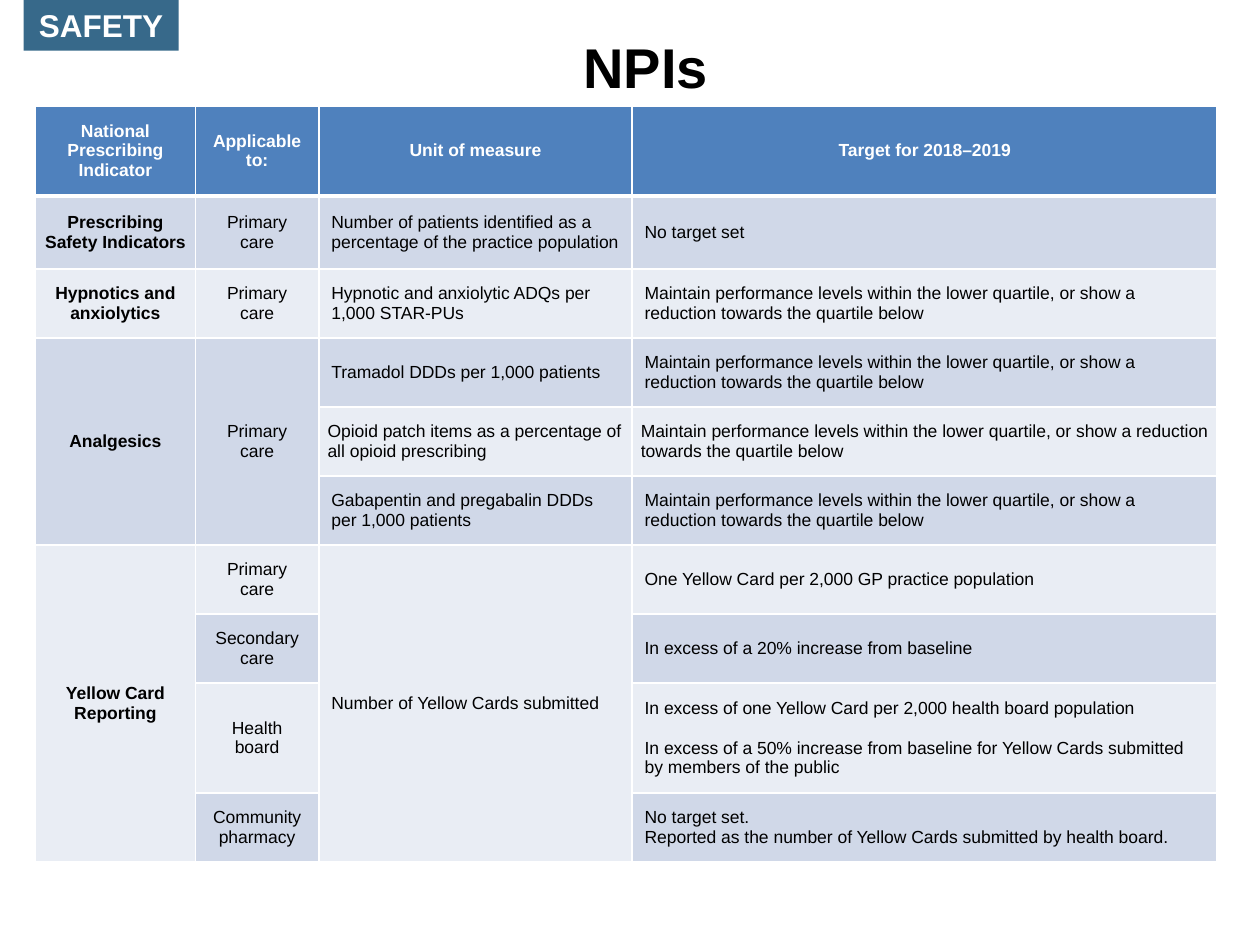
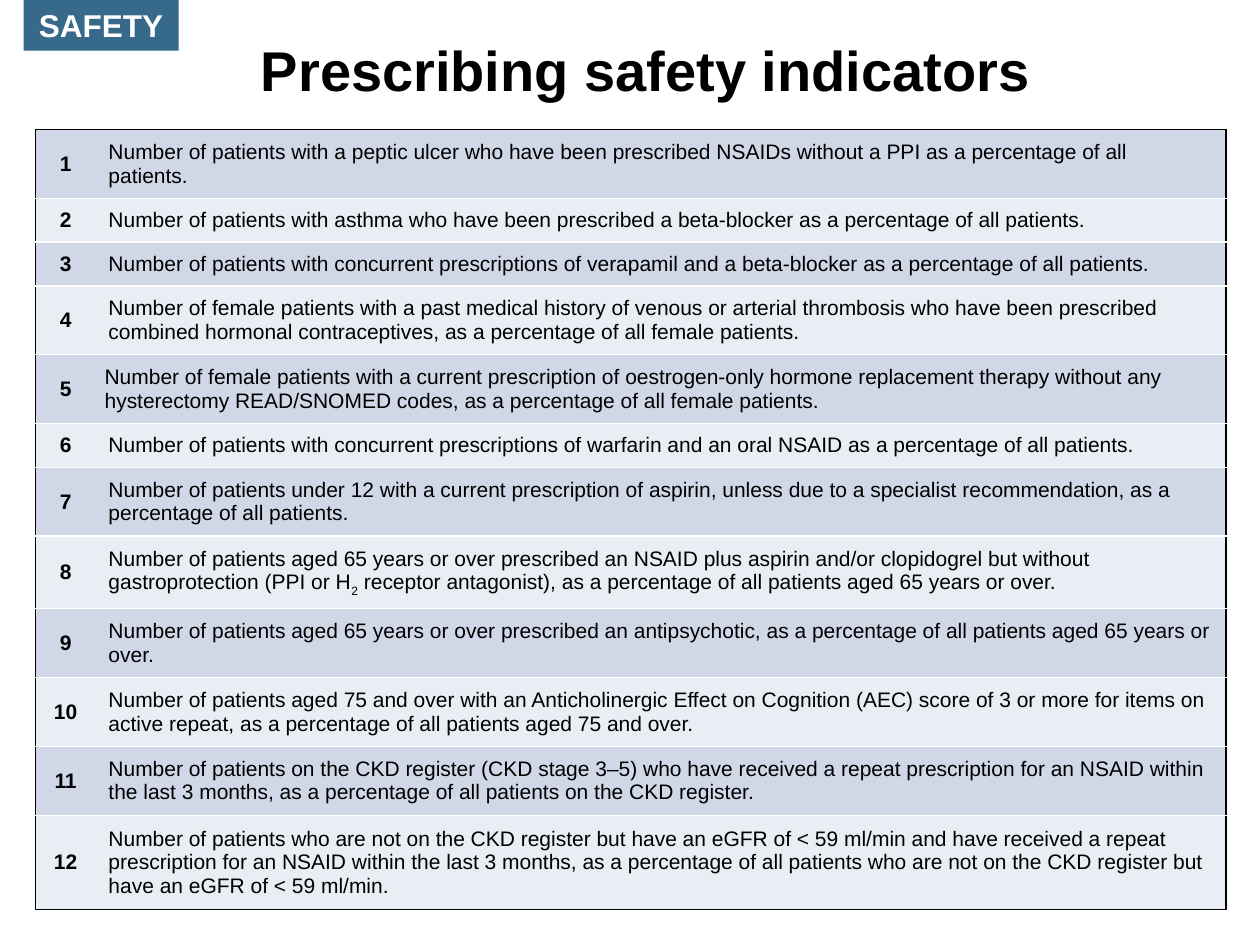
from dataclasses import dataclass
from typing import Any, Optional

from lxml import etree
from pptx import Presentation
from pptx.dml.color import RGBColor
from pptx.enum import shapes, text
from pptx.oxml.ns import qn
from pptx.slide import Slide
from pptx.util import Pt

Border = Optional[tuple[str, float]]


@dataclass(frozen=True)
class Theme:
    font: str = "Arial"
    ink: str = "000000"
    white: str = "FFFFFF"
    badge: str = "37698A"
    header: str = "4F81BD"
    bands: tuple[str, str] = ("D0D8E8", "E9EDF4")
    title_size: float = 32
    badge_size: float = 18
    npi_size: float = 10
    indicator_size: float = 12


@dataclass(frozen=True)
class TableSpec:
    left: float
    top: float
    widths: tuple[float, ...]
    heights: tuple[float, ...]
    rows: tuple[tuple[Optional[str], ...], ...]
    size: float
    pad: float
    centred: int
    has_header: bool
    framed: bool
    tight: frozenset[tuple[int, int]]


THEME = Theme()
SIDE_PAD, TIGHT_PAD = 7.2, 5
PRIMARY = "Primary care"
MAINTAIN = ("Maintain performance levels within the lower quartile, "
            "or show a reduction towards the quartile below")

NPIS = TableSpec(
    left=20.2, top=60.5, widths=(91.4, 70.6, 179, 334.4),
    heights=(50, 41.7, *[39.4] * 6, 61.7, 39.4),
    size=THEME.npi_size, pad=7.7, centred=2, has_header=True, framed=False,
    tight=frozenset({(1, 0), (2, 0), (4, 2), (4, 3)}),
    rows=(
        ("National Prescribing Indicator", "Applicable to:", "Unit of measure",
         "Target for 2018–2019"),
        ("Prescribing Safety Indicators", PRIMARY,
         "Number of patients identified as a percentage of the practice population",
         "No target set"),
        ("Hypnotics and anxiolytics", PRIMARY,
         "Hypnotic and anxiolytic ADQs per 1,000 STAR-PUs", MAINTAIN),
        ("Analgesics", PRIMARY, "Tramadol DDDs per 1,000 patients", MAINTAIN),
        (None, None, "Opioid patch items as a percentage of all opioid prescribing", MAINTAIN),
        (None, None, "Gabapentin and pregabalin DDDs per 1,000 patients", MAINTAIN),
        ("Yellow Card Reporting", PRIMARY, "Number of Yellow Cards submitted",
         "One Yellow Card per 2,000 GP practice population"),
        (None, "Secondary care", None, "In excess of a 20% increase from baseline"),
        (None, "Health board", None,
         "In excess of one Yellow Card per 2,000 health board population\n"
         "In excess of a 50% increase from baseline for Yellow Cards submitted "
         "by members of the public"),
        (None, "Community pharmacy", None,
         "No target set.\n"
         "Reported as the number of Yellow Cards submitted by health board."),
    ),
)
SPACED_CELL = (8, 3)

INDICATORS = (
    "Number of patients with a peptic ulcer who have been prescribed NSAIDs without a PPI "
    "as a percentage of all patients.",
    "Number of patients with asthma who have been prescribed a beta-blocker "
    "as a percentage of all patients.",
    "Number of patients with concurrent prescriptions of verapamil and a beta-blocker "
    "as a percentage of all patients.",
    "Number of female patients with a past medical history of venous or arterial thrombosis "
    "who have been prescribed combined hormonal contraceptives, "
    "as a percentage of all female patients.",
    "Number of female patients with a current prescription of oestrogen-only hormone "
    "replacement therapy without any hysterectomy READ/SNOMED codes, "
    "as a percentage of all female patients.",
    "Number of patients with concurrent prescriptions of warfarin and an oral NSAID "
    "as a percentage of all patients.",
    "Number of patients under 12 with a current prescription of aspirin, "
    "unless due to a specialist recommendation, as a percentage of all patients.",
    "Number of patients aged 65 years or over prescribed an NSAID plus aspirin and/or "
    "clopidogrel but without gastroprotection (PPI or H|2| receptor antagonist), "
    "as a percentage of all patients aged 65 years or over.",
    "Number of patients aged 65 years or over prescribed an antipsychotic, "
    "as a percentage of all patients aged 65 years or over.",
    "Number of patients aged 75 and over with an Anticholinergic Effect on Cognition (AEC) "
    "score of 3 or more for items on active repeat, "
    "as a percentage of all patients aged 75 and over.",
    "Number of patients on the CKD register (CKD stage 3–5) who have received a repeat "
    "prescription for an NSAID within the last 3 months, "
    "as a percentage of all patients on the CKD register.",
    "Number of patients who are not on the CKD register but have an eGFR of < 59 ml/min "
    "and have received a repeat prescription for an NSAID within the last 3 months, "
    "as a percentage of all patients who are not on the CKD register "
    "but have an eGFR of < 59 ml/min.",
)
ONE_LINE, TWO_LINES, THREE_LINES = (13.8 * n + 10.8 for n in (1, 2, 3))
SUBSCRIPT_LINES = TWO_LINES + 1.6

SAFETY = TableSpec(
    left=20.2, top=74, widths=(34.6, 645.8),
    heights=(TWO_LINES, ONE_LINE, ONE_LINE, TWO_LINES, TWO_LINES, ONE_LINE, TWO_LINES,
             SUBSCRIPT_LINES, TWO_LINES, TWO_LINES, TWO_LINES, THREE_LINES),
    size=THEME.indicator_size, pad=5.3, centred=1, has_header=False, framed=True,
    tight=frozenset({(4, 0), (4, 1)}),
    rows=tuple((str(n), wording) for n, wording in enumerate(INDICATORS, 1)),
)


def write(tf: Any, wording: str, *, size: float, color: str = THEME.ink, bold: bool = False,
          centre: bool = False, gap: float = 0) -> None:
    for i, line in enumerate(wording.split("\n")):
        p = tf.add_paragraph() if i else tf.paragraphs[0]
        p.alignment = text.PP_ALIGN.CENTER if centre else text.PP_ALIGN.LEFT
        if i and gap:
            p.space_before = Pt(gap)
        for j, part in enumerate(line.split("|")):
            r = p.add_run()
            r.text = part
            r.font.name, r.font.size, r.font.bold = THEME.font, Pt(size), bold
            r.font.color.rgb = RGBColor.from_string(color)
            if j % 2:
                r._r.get_or_add_rPr().set("baseline", "-25000")


def set_borders(cell: Any, borders: dict[str, Border]) -> None:
    tc_pr = cell._tc.get_or_add_tcPr()
    for side, border in borders.items():
        ln = etree.SubElement(tc_pr, qn(f"a:ln{side}"))
        if border is None:
            etree.SubElement(ln, qn("a:noFill"))
            continue
        color, width = border
        ln.set("w", str(Pt(width)))
        solid = etree.SubElement(ln, qn("a:solidFill"))
        etree.SubElement(solid, qn("a:srgbClr"), val=color)


def cell_borders(spec: TableSpec, row: int, col: int) -> dict[str, Border]:
    white, black = (THEME.white, 1), (THEME.ink, 1)
    if spec.framed:
        return {
            "L": black if col == 0 else None,
            "R": black if col == len(spec.widths) - 1 else None,
            "T": black if row == 0 else white,
            "B": black if row == len(spec.rows) - 1 else white,
        }
    heavy = (THEME.white, 3)
    return {
        "L": white,
        "R": white,
        "T": heavy if spec.has_header and row == 1 else white,
        "B": heavy if spec.has_header and row == 0 else white,
    }


def row_span(spec: TableSpec, row: int, col: int) -> int:
    end = row + 1
    while end < len(spec.rows) and spec.rows[end][col] is None:
        end += 1
    return end - row


def add_grid(s: Slide, spec: TableSpec) -> None:
    table = s.shapes.add_table(
        len(spec.rows), len(spec.widths), Pt(spec.left), Pt(spec.top),
        Pt(sum(spec.widths)), Pt(sum(spec.heights))).table
    table.first_row = table.horz_banding = False
    for column, width in zip(table.columns, spec.widths):
        column.width = Pt(width)
    for table_row, height in zip(table.rows, spec.heights):
        table_row.height = Pt(height)
    for row, wordings in enumerate(spec.rows):
        is_header = spec.has_header and row == 0
        band = THEME.bands[(row - spec.has_header) % 2]
        for col, wording in enumerate(wordings):
            cell = table.cell(row, col)
            set_borders(cell, cell_borders(spec, row, col))
            cell.fill.solid()
            cell.fill.fore_color.rgb = RGBColor.from_string(THEME.header if is_header else band)
            if wording is None:
                continue
            span = row_span(spec, row, col)
            if span > 1:
                cell.merge(table.cell(row + span - 1, col))
            cell.vertical_anchor = text.MSO_ANCHOR.MIDDLE
            side = TIGHT_PAD if (row, col) in spec.tight else SIDE_PAD
            cell.margin_left = cell.margin_right = Pt(side)
            cell.margin_top = cell.margin_bottom = Pt(spec.pad)
            write(cell.text_frame, wording, size=spec.size,
                  color=THEME.white if is_header else THEME.ink,
                  bold=is_header or col == 0, centre=is_header or col < spec.centred,
                  gap=11.5 if spec is NPIS and (row, col) == SPACED_CELL else 0)


def add_title(s: Slide, wording: str, top: float) -> None:
    tf = s.shapes.add_textbox(Pt(54), Pt(top), Pt(630), Pt(60)).text_frame
    tf.word_wrap = True
    tf.vertical_anchor = text.MSO_ANCHOR.TOP
    tf.margin_top = Pt(7)
    write(tf, wording, size=THEME.title_size, bold=True, centre=True)


def add_badge(s: Slide) -> None:
    sp = s.shapes.add_shape(shapes.MSO_SHAPE.RECTANGLE, Pt(13.5), Pt(0), Pt(88.6), Pt(29))
    sp.shadow.inherit = False
    sp.fill.solid()
    sp.fill.fore_color.rgb = RGBColor.from_string(THEME.badge)
    sp.line.fill.background()
    sp.text_frame.vertical_anchor = text.MSO_ANCHOR.MIDDLE
    write(sp.text_frame, "SAFETY", size=THEME.badge_size, color=THEME.white,
          bold=True, centre=True)


def add_table_slide(prs: Any, title: str, title_top: float, spec: TableSpec) -> None:
    s = prs.slides.add_slide(prs.slide_layouts[6])
    add_title(s, title, title_top)
    add_grid(s, spec)
    add_badge(s)


def main() -> None:
    prs = Presentation()
    prs.slide_width, prs.slide_height = Pt(720), Pt(540)
    add_table_slide(prs, "NPIs", 11.5, NPIS)
    add_table_slide(prs, "Prescribing safety indicators", 13.5, SAFETY)
    prs.save("out.pptx")


if __name__ == "__main__":
    main()
